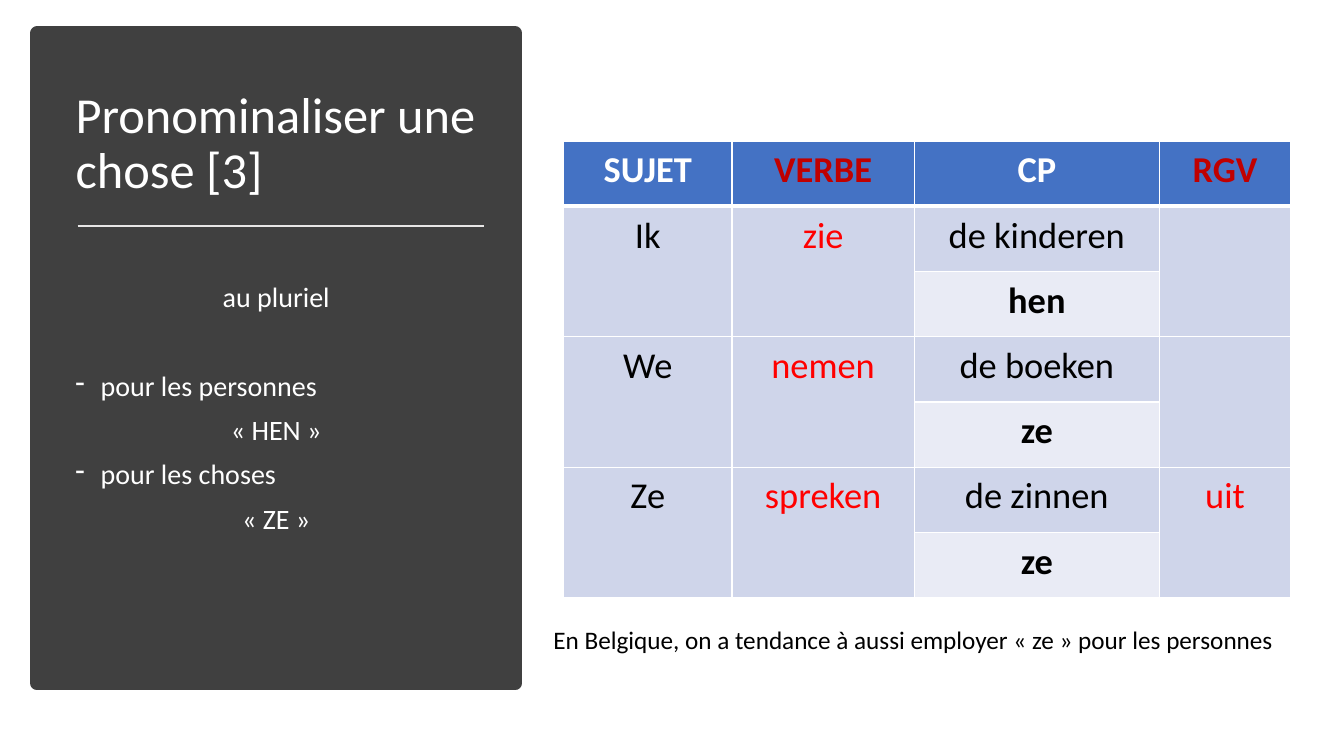
from lxml import etree
from pptx import Presentation
from pptx.dml.color import RGBColor
from pptx.enum.shapes import MSO_CONNECTOR, MSO_SHAPE
from pptx.enum.text import MSO_ANCHOR, MSO_AUTO_SIZE, PP_ALIGN
from pptx.oxml.ns import qn
from pptx.util import Pt

LEFT, CENTER = PP_ALIGN.LEFT, PP_ALIGN.CENTER
MIDDLE, TOP = MSO_ANCHOR.MIDDLE, MSO_ANCHOR.TOP
NO_FIT, GROW = MSO_AUTO_SIZE.NONE, MSO_AUTO_SIZE.SHAPE_TO_FIT_TEXT
RECTANGLE, STRAIGHT = MSO_SHAPE.RECTANGLE, MSO_CONNECTOR.STRAIGHT

EMU_PER_PX = 9144
FONT = "Calibri"
WHITE, BLACK, RED, DARK_RED = "FFFFFF", "000000", "FF0000", "C00000"
PANEL, RULE = "404040", "E7E6E6"
HEADER_FILL, SENTENCE_FILL, PRONOUN_FILL = "4472C4", "CFD5EA", "E9EBF5"

HEADERS = ["SUJET", "VERBE", "CP", "RGV"]
SENTENCES = [
    ("Ik", "zie", "de kinderen", "", "hen"),
    ("We", "nemen", "de boeken", "", "ze"),
    ("Ze", "spreken", "de zinnen", "uit", "ze"),
]
COLUMN_WIDTHS = [167, 181, 243, 130]
COMPLEMENT = 2
RULES = [
    ("au pluriel", False, 0),
    ("pour les personnes", True, 42),
    ("« HEN »", False, 10),
    ("pour les choses", True, 10),
    ("« ZE »", False, 10),
]


def px(length):
    return length * EMU_PER_PX


def box(*lengths):
    return [px(length) for length in lengths]


def rgb(value):
    return RGBColor.from_string(value)


def apply(target, values):
    for name, value in values.items():
        setattr(target, name, value)


def write(paragraph, text, size, color, bold=False, **layout):
    run = paragraph.add_run()
    run.text = text
    apply(run.font, {"name": FONT, "size": Pt(size), "bold": bold})
    run.font.color.rgb = rgb(color)
    apply(paragraph, layout)


def add_panel(slide):
    panel = slide.shapes.add_shape(RECTANGLE, *box(37, 33, 474, 645))
    panel.shadow.inherit = False
    panel.fill.solid()
    panel.fill.fore_color.rgb = rgb(PANEL)
    panel.line.color.rgb = rgb(PANEL)
    panel.line.width = Pt(10)
    return panel


def add_title(slide, panel, text):
    title = slide.shapes.title
    left, top, width, height = box(65, 70, 418, 147)
    apply(title, {"left": left, "top": top, "width": width, "height": height})
    apply(title.text_frame, {"vertical_anchor": MIDDLE, "auto_size": NO_FIT, "word_wrap": True})
    write(title.text_frame.paragraphs[0], text, 36, WHITE, alignment=LEFT, line_spacing=0.9)
    panel.element.addnext(title.element)


def add_rule(slide):
    rule = slide.shapes.add_connector(STRAIGHT, *box(77, 224, 480, 224))
    rule.line.color.rgb = rgb(RULE)
    rule.line.width = Pt(1.75)
    etree.SubElement(rule.element.spPr, qn("a:effectLst"))


def add_dash(paragraph):
    properties = paragraph._p.get_or_add_pPr()
    properties.set("marL", str(px(25)))
    properties.set("indent", str(px(-25)))
    etree.SubElement(properties, qn("a:buChar"), char="-")


def add_pronoun_rules(slide):
    frame = slide.shapes.add_textbox(*box(65, 232, 418, 413)).text_frame
    apply(frame, {"word_wrap": True, "auto_size": NO_FIT, "margin_top": px(49)})
    for index, (text, dashed, gap) in enumerate(RULES):
        paragraph = frame.add_paragraph() if index else frame.paragraphs[0]
        write(paragraph, text, 20, WHITE, alignment=LEFT if dashed else CENTER,
              line_spacing=0.9, space_before=Pt(gap))
        if dashed:
            add_dash(paragraph)


def add_borders(cell, row):
    properties = cell._tc.get_or_add_tcPr()
    heavy_edge = {0: "B", 1: "T"}.get(row)
    for edge in "LRTB":
        width = Pt(3 if edge == heavy_edge else 1)
        line = etree.SubElement(properties, qn("a:ln" + edge), w=str(width))
        fill = etree.SubElement(line, qn("a:solidFill"))
        etree.SubElement(fill, qn("a:srgbClr"), val=WHITE)


def format_cell(cell, row, fill):
    add_borders(cell, row)
    cell.fill.solid()
    cell.fill.fore_color.rgb = rgb(fill)
    apply(cell, {"margin_left": px(15), "margin_right": px(15),
                 "margin_top": px(7), "margin_bottom": px(7), "vertical_anchor": TOP})


def fill_cell(cell, text, color, bold):
    if text:
        write(cell.text_frame.paragraphs[0], text, 26, color, bold, alignment=CENTER)


def add_sentence_table(slide):
    row_count = 1 + 2 * len(SENTENCES)
    table = slide.shapes.add_table(row_count, len(HEADERS), *box(559, 140, 721, 453)).table
    for column, width in zip(table.columns, COLUMN_WIDTHS):
        column.width = px(width)
    for row in range(row_count):
        table.rows[row].height = px(453) // row_count
        for column in range(len(HEADERS)):
            pronoun = row and row % 2 == 0 and column == COMPLEMENT
            fill = PRONOUN_FILL if pronoun else SENTENCE_FILL if row else HEADER_FILL
            format_cell(table.cell(row, column), row, fill)
    for column, text in enumerate(HEADERS):
        fill_cell(table.cell(0, column), text, DARK_RED if column % 2 else WHITE, True)
    for index, (*words, pronoun) in enumerate(SENTENCES):
        row = 1 + 2 * index
        for column, text in enumerate(words):
            cell = table.cell(row, column)
            fill_cell(cell, text, RED if column % 2 else BLACK, False)
            if column != COMPLEMENT:
                cell.merge(table.cell(row + 1, column))
        fill_cell(table.cell(row + 1, COMPLEMENT), pronoun, BLACK, True)


def add_usage_note(slide, text):
    frame = slide.shapes.add_textbox(*box(539, 614, 741, 40)).text_frame
    apply(frame, {"word_wrap": True, "auto_size": GROW})
    write(frame.paragraphs[0], text, 18, BLACK)


def main():
    presentation = Presentation()
    apply(presentation, {"slide_width": px(1333), "slide_height": px(750)})
    slide = presentation.slides.add_slide(presentation.slide_layouts.get_by_name("Title Only"))
    panel = add_panel(slide)
    add_title(slide, panel, "Pronominaliser une chose [3]")
    add_rule(slide)
    add_pronoun_rules(slide)
    add_sentence_table(slide)
    add_usage_note(slide, "En Belgique, on a tendance à aussi employer « ze » pour les personnes")
    presentation.save("out.pptx")


if __name__ == "__main__":
    main()
